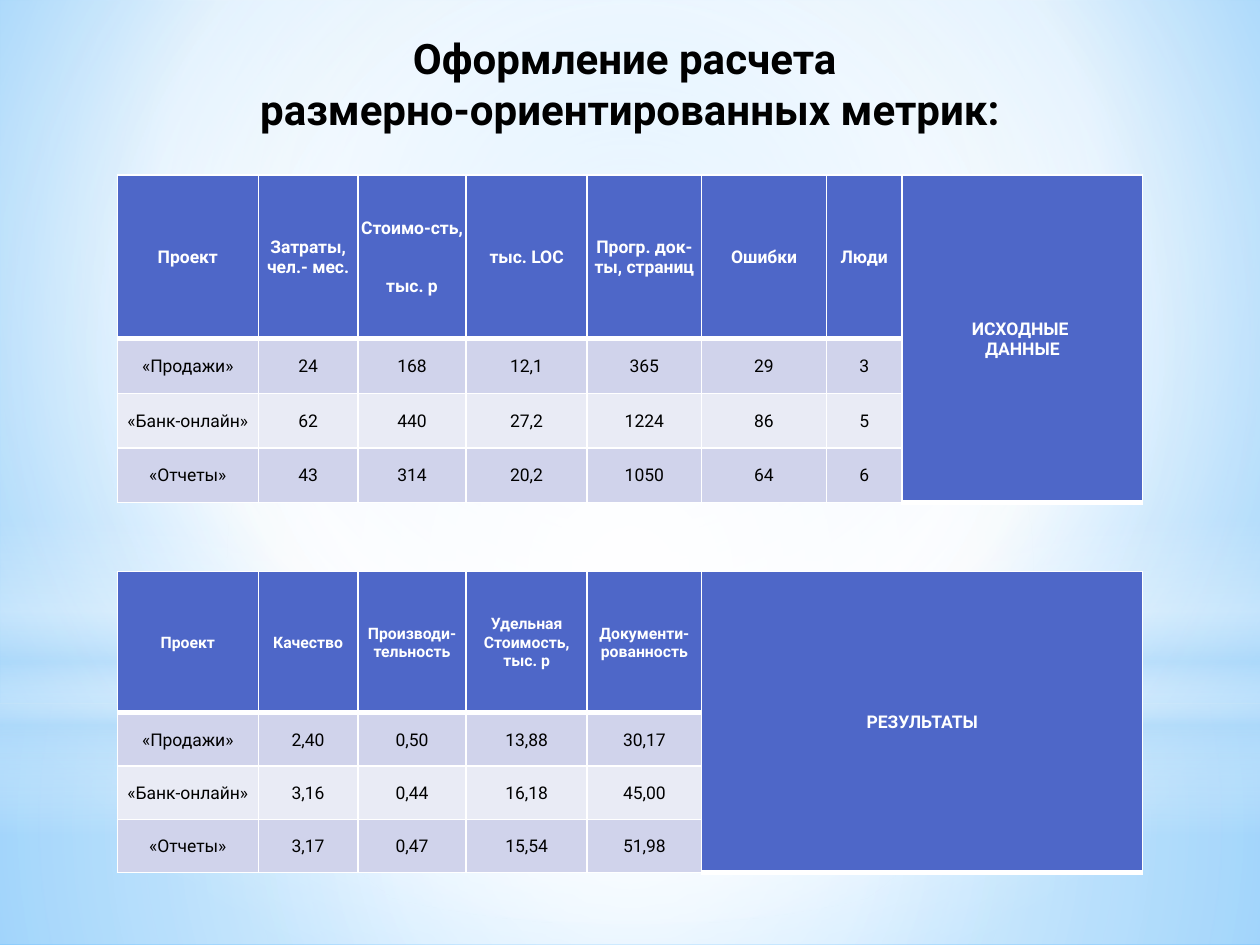
from lxml.etree import SubElement as Sub
from pptx import Presentation
from pptx.dml.color import RGBColor
from pptx.enum.shapes import MSO_SHAPE as Kind
from pptx.enum.text import MSO_ANCHOR as Anchor, MSO_AUTO_SIZE as Auto, PP_ALIGN as Align
from pptx.oxml.ns import qn
from pptx.util import Pt

HEAD, ODD, EVEN = "4E67C8", "D0D3EB", "E9EBF5"
WHITE, BLACK, SKY = "FFFFFF", "000000", "B4DCFA"
MID = (50, 50, 50, 50)


def tint(code):
    return RGBColor.from_string(code)


def apply(item, form):
    for name, value in form.items():
        setattr(item, name, value)


def blend(fill, node, stops, rect=None):
    fill.solid()
    old = node.find(qn("a:solidFill"))
    grad = node.makeelement(qn("a:gradFill"), {"rotWithShape": "1"})
    node.replace(old, grad)
    group = Sub(grad, qn("a:gsLst"))
    for pos, code, alpha in stops:
        stop = Sub(group, qn("a:gs"), pos=str(pos * 1000))
        shade = Sub(stop, qn("a:srgbClr"), val=code)
        if alpha < 100:
            Sub(shade, qn("a:alpha"), val=str(alpha * 1000))
    if rect:
        way = Sub(grad, qn("a:path"), {"path": "circle"})
        Sub(way, qn("a:fillToRect"), {k: str(v * 1000) for k, v in zip("ltrb", rect)})
    else:
        Sub(grad, qn("a:lin"), ang="5400000", scaled="0")


class Deck:
    font = "Roboto"
    inset = {"margin_left": Pt(0.72), "margin_top": Pt(0.72),
             "margin_right": Pt(0.72), "margin_bottom": Pt(0)}

    def __init__(self, show):
        self.slide = show.slides.add_slide(show.slide_layouts[5])

    def back(self, stops, rect):
        fill = self.slide.background.fill
        fill.solid()
        node = self.slide.element.xpath(".//p:bgPr")[0]
        blend(fill, node, stops, rect)

    def glow(self, kind, top, high, stops, rect=None):
        shape = self.slide.shapes.add_shape(kind, 0, Pt(top), Pt(720), Pt(high))
        shape.shadow.inherit = False
        shape.line.fill.background()
        blend(shape.fill, shape.element.spPr, stops, rect)

    def label(self, frame, text, size, code, bold):
        par = frame.paragraphs[0]
        par.text = text
        par.alignment = Align.CENTER
        for run in par.runs:
            apply(run.font, {"name": self.font, "size": Pt(size), "bold": bold})
            run.font.color.rgb = tint(code)

    def title(self, text, left, top, wide, high):
        shape = self.slide.shapes.title
        self.slide.shapes.element.append(shape.element)
        apply(shape, {"left": Pt(left), "top": Pt(top), "width": Pt(wide), "height": Pt(high)})
        apply(shape.text_frame, {"word_wrap": False, "auto_size": Auto.SHAPE_TO_FIT_TEXT,
                                 "vertical_anchor": Anchor.TOP})
        self.label(shape.text_frame, text, 24, BLACK, True)

    def edge(self, cell, base):
        props = cell._tc.get_or_add_tcPr()
        for side in "LRTB":
            size = base if side == "B" else 1
            line = Sub(props, qn("a:ln" + side), w=str(Pt(size)))
            Sub(Sub(line, qn("a:solidFill")), qn("a:srgbClr"), val=WHITE)

    def table(self, top, wides, head, rest, rows, size, note):
        deep, last = len(rows), len(wides) - 1
        frame = self.slide.shapes.add_table(deep, last + 1, Pt(67), Pt(top), Pt(sum(wides)),
                                            Pt(head + rest * (deep - 1)))
        grid = frame.table
        for col, wide in zip(grid.columns, wides):
            col.width = Pt(wide)
        for i, row in enumerate(grid.rows):
            row.height = Pt(rest if i else head)
            for j, cell in enumerate(row.cells):
                lead = i == 0 or j == last
                apply(cell, {**self.inset, "vertical_anchor": Anchor.MIDDLE})
                self.edge(cell, 3 if lead else 1)
                cell.fill.solid()
                cell.fill.fore_color.rgb = tint(HEAD if lead else ODD if i % 2 else EVEN)
                if j < last:
                    self.label(cell.text_frame, rows[i][j], 10 if i else size,
                               WHITE if lead else BLACK, lead)
        side = grid.cell(0, last)
        side.merge(grid.cell(deep - 1, last))
        self.label(side.text_frame, note, 10, WHITE, True)


def main():
    show = Presentation()
    show.slide_width, show.slide_height = Pt(720), Pt(540)
    deck = Deck(show)
    deck.back([(0, "9ED5FF", 100), (60, WHITE, 100), (100, "5BB9FF", 100)], (20, 10, 20, 60))
    deck.glow(Kind.RECTANGLE, 402, 138, [(0, WHITE, 91), (37, WHITE, 76), (100, SKY, 79)], MID)
    deck.glow(Kind.RECTANGLE, 0, 402, [(0, WHITE, 89), (48, WHITE, 62), (100, SKY, 79)], MID)
    deck.glow(Kind.RECTANGLE, 297, 180, [(0, WHITE, 0), (29, WHITE, 30), (45, SKY, 40),
                                         (55, WHITE, 26), (65, SKY, 60), (100, WHITE, 0)])
    deck.glow(Kind.OVAL, 126, 402, [(0, WHITE, 100), (56, WHITE, 0)], MID)
    deck.title("Оформление расчета \nразмерно-ориентированных метрик:", 135.4, 15.1, 449.2, 65.5)

    base = [80.6, 56.9, 61.9, 69.1, 65.5]
    tail = [71.3, 43.2, 137.5]
    deck.table(100, base + tail, 93.6, 31.2, [
        ["Проект", "Затраты, чел.- мес.", "Стоимо-сть, \nтыс. р", "тыс. LOC",
         "Прогр. док-ты, страниц", "Ошибки", "Люди"],
        ["«Продажи»", "24", "168", "12,1", "365", "29", "3"],
        ["«Банк-онлайн»", "62", "440", "27,2", "1224", "86", "5"],
        ["«Отчеты»", "43", "314", "20,2", "1050", "64", "6"],
    ], 10, "ИСХОДНЫЕ \nДАННЫЕ")
    deck.table(326.7, base + [sum(tail)], 80.6, 30.5, [
        ["Проект", "Качество", "Производи-\nтельность", "Удельная\nСтоимость,\nтыс. р",
         "Документи-\nрованность"],
        ["«Продажи»", "2,40", "0,50", "13,88", "30,17"],
        ["«Банк-онлайн»", "3,16", "0,44", "16,18", "45,00"],
        ["«Отчеты»", "3,17", "0,47", "15,54", "51,98"],
    ], 9, "РЕЗУЛЬТАТЫ")
    show.save("out.pptx")


if __name__ == "__main__":
    main()
